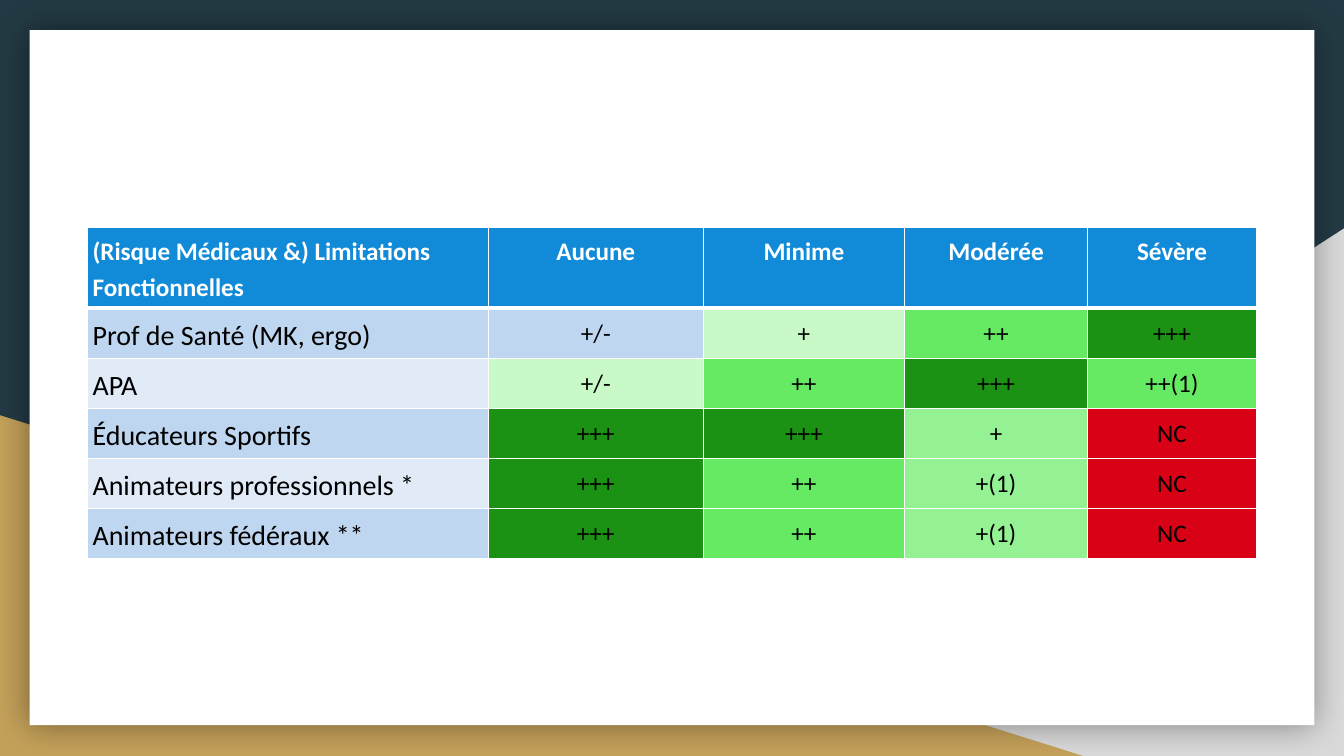
import pptx
import pptx.util
import pptx.dml.color
import pptx.enum.shapes
import pptx.enum.text
import pptx.oxml
from pptx.oxml.ns import nsdecls

Cm, Pt = pptx.util.Cm, pptx.util.Pt
RGBColor = pptx.dml.color.RGBColor
SHAPE = pptx.enum.shapes.MSO_SHAPE
ALIGN = pptx.enum.text.PP_ALIGN

# Colours
NAVY = RGBColor(0x23, 0x3A, 0x44)
GREY = RGBColor(0xD9, 0xD9, 0xD9)
GOLD = RGBColor(0xC4, 0xA1, 0x5A)
WHITE = RGBColor(0xFF, 0xFF, 0xFF)
BLACK = RGBColor(0, 0, 0)
BLUE = RGBColor(0x11, 0x8B, 0xD8)
BAND_DARK = RGBColor(0xBF, 0xD6, 0xF0)
BAND_LIGHT = RGBColor(0xE1, 0xEB, 0xF8)
PALE = RGBColor(0xC8, 0xF9, 0xC7)
SOFT = RGBColor(0x95, 0xF2, 0x94)
GREEN = RGBColor(0x66, 0xEA, 0x64)
DEEP = RGBColor(0x1C, 0x92, 0x15)
RED = RGBColor(0xD9, 0x01, 0x15)

# Content: header, then a label and (mark, fill) pairs per row
HEADER = ["(Risque Médicaux &) Limitations Fonctionnelles",
          "Aucune", "Minime", "Modérée", "Sévère"]
ROWS = [
    ("Prof de Santé (MK, ergo)",
     [("+/-", BAND_DARK), ("+", PALE), ("++", GREEN), ("+++", DEEP)]),
    ("APA",
     [("+/-", PALE), ("++", GREEN), ("+++", DEEP), ("++(1)", GREEN)]),
    ("Éducateurs Sportifs",
     [("+++", DEEP), ("+++", DEEP), ("+", SOFT), ("NC", RED)]),
    ("Animateurs professionnels *",
     [("+++", DEEP), ("++", GREEN), ("+(1)", SOFT), ("NC", RED)]),
    ("Animateurs fédéraux **",
     [("+++", DEEP), ("++", GREEN), ("+(1)", SOFT), ("NC", RED)]),
]
COL_WIDTHS = [7.58, 4.06, 3.81, 3.45, 3.2]
HEADER_HEIGHT, ROW_HEIGHT = 1.5, 0.94

# Backdrop: shape, left, top, width, height, fill
BACKDROP = [
    (SHAPE.RIGHT_TRIANGLE, 9.96, 4.32, 15.44, 9.97, GREY),
    (SHAPE.RIGHT_TRIANGLE, 0, 7.85, 20.47, 6.44, GOLD),
    (SHAPE.RECTANGLE, 0.56, 0.57, 24.28, 13.14, WHITE),
]


def add_backdrop(s):
    shapes = []
    for kind, left, top, width, height, color in BACKDROP:
        sp = s.shapes.add_shape(kind, Cm(left), Cm(top), Cm(width), Cm(height))
        sp.shadow.inherit = False
        sp.fill.solid()
        sp.fill.fore_color.rgb = color
        sp.line.fill.background()
        shapes.append(sp)
    right_triangle, _, card = shapes
    right_triangle._element.spPr.xfrm.set("flipH", "1")
    # Soft shadow around the card
    effects = card._element.spPr.find(pptx.oxml.ns.qn("a:effectLst"))
    effects.append(pptx.oxml.parse_xml(
        f'<a:outerShdw {nsdecls("a")} blurRad="{Pt(18)}" dist="0" dir="0" '
        'algn="ctr" rotWithShape="0"><a:srgbClr val="000000">'
        '<a:alpha val="40000"/></a:srgbClr></a:outerShdw>'))


def add_borders(cell, top, bottom):
    tcPr = cell._tc.get_or_add_tcPr()
    for side, width in {"L": 0.75, "R": 0.75, "T": top, "B": bottom}.items():
        tcPr.append(pptx.oxml.parse_xml(
            f'<a:ln{side} {nsdecls("a")} w="{Pt(width)}"><a:solidFill>'
            f'<a:srgbClr val="{WHITE}"/></a:solidFill></a:ln{side}>'))


def fill_cell(cell, text, fill, align, font):
    cell.fill.solid()
    cell.fill.fore_color.rgb = fill
    for side in ("left", "right", "top", "bottom"):
        setattr(cell, f"margin_{side}", Cm(0.1))
    p = cell.text_frame.paragraphs[0]
    p.alignment, p.line_spacing = align, 1.15
    r = p.add_run()
    r.text = text
    r.font.color.rgb = font["color"]
    for name in ("name", "size", "bold"):
        setattr(r.font, name, font[name])


def add_risk_table(s):
    heights = [HEADER_HEIGHT] + [ROW_HEIGHT] * len(ROWS)
    table = s.shapes.add_table(
        len(heights), len(COL_WIDTHS), Cm(1.65), Cm(4.29),
        Cm(sum(COL_WIDTHS)), Cm(sum(heights))).table
    for col, width in zip(table.columns, COL_WIDTHS):
        col.width = Cm(width)
    for row, height in zip(table.rows, heights):
        row.height = Cm(height)

    bands = [BAND_DARK, BAND_LIGHT]
    grid = [[(text, BLUE) for text in HEADER]]
    grid += [[(label, bands[i % 2])] + marks
             for i, (label, marks) in enumerate(ROWS)]
    for i, row in enumerate(grid):
        for j, (text, fill) in enumerate(row):
            header, label = i == 0, j == 0
            font = {"name": "Calibri", "bold": header,
                    "size": Pt(15 if label and not header else 13.5),
                    "color": WHITE if header else BLACK}
            cell = table.cell(i, j)
            add_borders(cell, 2.25 if i == 1 else 0.75, 2.25 if header else 0.75)
            fill_cell(cell, text, fill, ALIGN.LEFT if label else ALIGN.CENTER, font)


def main():
    prs = pptx.Presentation()
    prs.slide_width, prs.slide_height = Cm(25.4), Cm(14.29)
    s = prs.slides.add_slide(prs.slide_layouts[6])
    s.background.fill.solid()
    s.background.fill.fore_color.rgb = NAVY
    add_backdrop(s)
    add_risk_table(s)
    prs.save("out.pptx")


if __name__ == "__main__":
    main()
